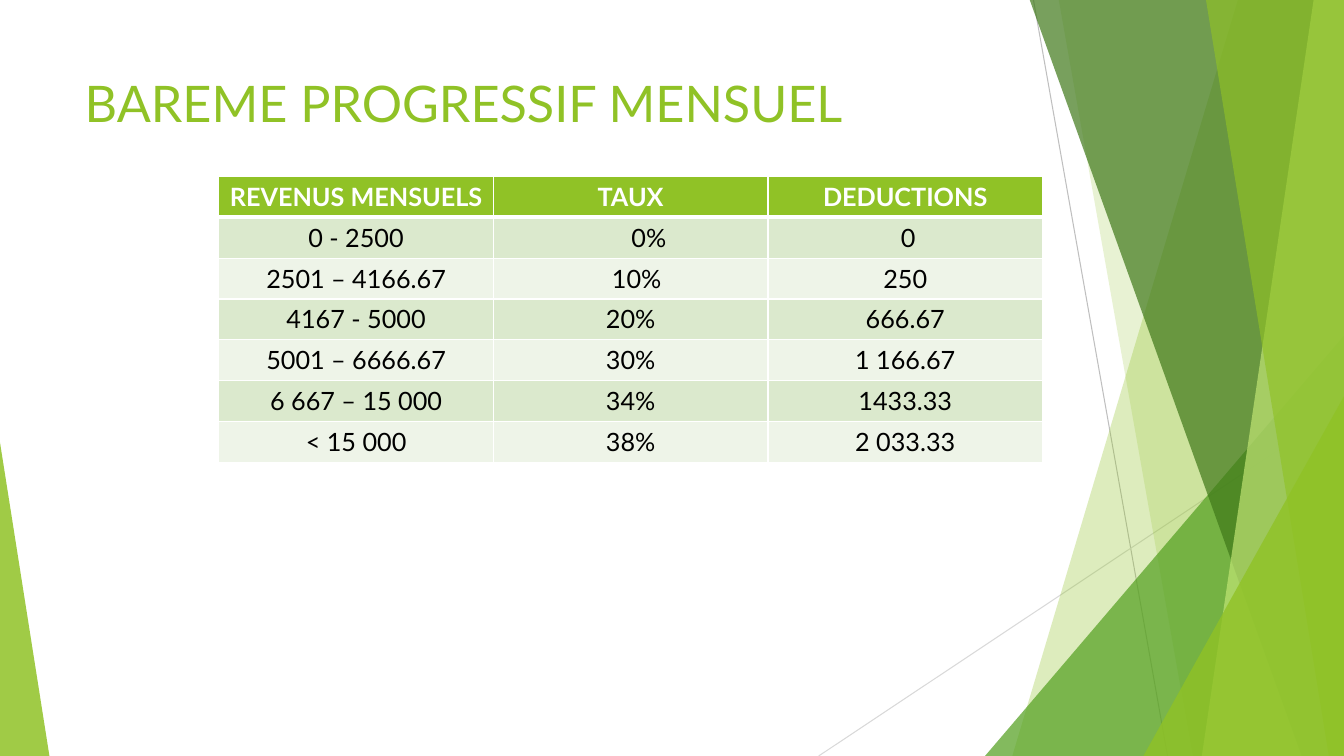
from dataclasses import dataclass

from lxml import etree
from pptx import Presentation
from pptx.dml.color import RGBColor
from pptx.enum.shapes import MSO_CONNECTOR, MSO_SHAPE
from pptx.enum.text import MSO_ANCHOR, PP_ALIGN
from pptx.oxml.ns import qn
from pptx.util import Inches, Pt

FONT = "Lato"
GREEN, WHITE, BLACK = "90C226", "FFFFFF", "000000"
BANDS = ("DBE9CD", "EEF4E8")
W, H, TOP = 13.33, 7.5, -0.01


@dataclass
class Band:
    """Panel reaching the right edge, with a slanted left side."""
    top_x: float
    bottom_x: float
    color: str
    alpha: int


@dataclass
class Triangle:
    """Right triangle standing on the bottom edge."""
    x: float
    y: float
    w: float
    apex: float
    color: str
    alpha: int


@dataclass
class Line:
    x1: float
    y1: float
    x2: float
    y2: float
    color: str


DECOR = [
    Line(10.25, 0, 11.58, H, "BFBFBF"),
    Line(W, 4.03, 8.12, H, "D9D9D9"),
    Band(12.28, 10.04, GREEN, 30),
    Band(10.5, 11.83, GREEN, 20),
    Triangle(9.77, 3.33, 3.56, 1, "54A021", 72),
    Band(10.21, 12.91, "3F7819", 70),
    Band(13.03, 11.92, "C0E474", 70),
    Band(11.96, 13.18, GREEN, 65),
    Triangle(11.34, 3.93, 1.99, 1, GREEN, 80),
    Triangle(0, 4.39, 0.49, 0, GREEN, 85),
]

ROWS = [
    ("REVENUS MENSUELS", "TAUX", "DEDUCTIONS"),
    ("0 - 2500", "0%", "0"),
    ("2501 – 4166.67", "10%", "250"),
    ("4167 - 5000", "20%", "666.67"),
    ("5001 – 6666.67", "30%", "1 166.67"),
    ("6 667 – 15 000", "34%", "1433.33"),
    ("< 15 000", "38%", "2 033.33"),
]
# Extra left margin of the cells set off to the right: (row, column)
OFFSETS = {(1, 1): 0.36, (1, 2): 0.06, (2, 1): 0.12}


def rgb(color: str) -> RGBColor:
    return RGBColor.from_string(color)


def write(tf, text: str, size=18, color=BLACK, bold=False, align=None) -> None:
    p = tf.paragraphs[0]
    p.alignment = align
    r = p.add_run()
    r.text = text
    r.font.name, r.font.size, r.font.bold = FONT, Pt(size), bold
    r.font.color.rgb = rgb(color)


def paint(sp, color: str, alpha: int) -> None:
    sp.shadow.inherit = False
    sp.line.fill.background()
    sp.fill.solid()
    sp.fill.fore_color.rgb = rgb(color)
    clr = sp.element.spPr.find(qn("a:solidFill"))[0]
    etree.SubElement(clr, qn("a:alpha"), val=str(alpha * 1000))


def draw_band(s, b: Band) -> None:
    points = [(b.top_x, TOP), (W, TOP), (W, H), (b.bottom_x, H)]
    start, *rest = [(Inches(x), Inches(y)) for x, y in points]
    fb = s.shapes.build_freeform(*start)
    fb.add_line_segments(rest, close=True)
    paint(fb.convert_to_shape(), b.color, b.alpha)


def draw_triangle(s, t: Triangle) -> None:
    sp = s.shapes.add_shape(MSO_SHAPE.ISOSCELES_TRIANGLE, Inches(t.x), Inches(t.y),
                            Inches(t.w), Inches(H - t.y))
    sp.adjustments[0] = t.apex
    paint(sp, t.color, t.alpha)


def draw_line(s, ln: Line) -> None:
    cx = s.shapes.add_connector(MSO_CONNECTOR.STRAIGHT, Inches(ln.x1), Inches(ln.y1),
                                Inches(ln.x2), Inches(ln.y2))
    cx.line.color.rgb = rgb(ln.color)
    cx.line.width = Pt(0.75)
    etree.SubElement(cx.element.spPr, qn("a:effectLst"))


def set_borders(cell, top: float, bottom: float) -> None:
    tcPr = cell._tc.get_or_add_tcPr()
    sides = (("L", 1), ("R", 1), ("T", top), ("B", bottom))
    for i, (side, width) in enumerate(sides):
        ln = etree.Element(qn(f"a:ln{side}"), w=str(Pt(width)))
        fill = etree.SubElement(ln, qn("a:solidFill"))
        etree.SubElement(fill, qn("a:srgbClr"), val=WHITE)
        tcPr.insert(i, ln)


def draw_table(s) -> None:
    tbl = s.shapes.add_table(len(ROWS), len(ROWS[0]), Inches(2.17), Inches(1.75),
                             Inches(8.17), Inches(2.84)).table
    for i, row in enumerate(ROWS):
        head = i == 0
        for j, text in enumerate(row):
            cell = tbl.cell(i, j)
            cell.fill.solid()
            cell.fill.fore_color.rgb = rgb(GREEN if head else BANDS[(i - 1) % 2])
            cell.margin_left = Inches(0.1 + OFFSETS.get((i, j), 0))
            set_borders(cell, top=3 if i == 1 else 1, bottom=3 if head else 1)
            write(cell.text_frame, text, color=WHITE if head else BLACK,
                  bold=head, align=PP_ALIGN.CENTER)


def draw_title(s) -> None:
    title = s.shapes.title
    title.left, title.top = Inches(0.74), Inches(0.67)
    title.width, title.height = Inches(9.4), Inches(1.44)
    tf = title.text_frame
    tf.vertical_anchor = MSO_ANCHOR.TOP
    write(tf, "BAREME PROGRESSIF MENSUEL", size=36, color=GREEN, align=PP_ALIGN.LEFT)
    title.element.getparent().append(title.element)  # in front of the decoration


def main() -> None:
    prs = Presentation()
    prs.slide_width, prs.slide_height = Inches(W), Inches(H)
    s = prs.slides.add_slide(prs.slide_layouts[5])

    # Decoration, from back to front
    draw = {Line: draw_line, Band: draw_band, Triangle: draw_triangle}
    for item in DECOR:
        draw[type(item)](s, item)

    # Content
    draw_title(s)
    draw_table(s)
    prs.save("out.pptx")


if __name__ == "__main__":
    main()
